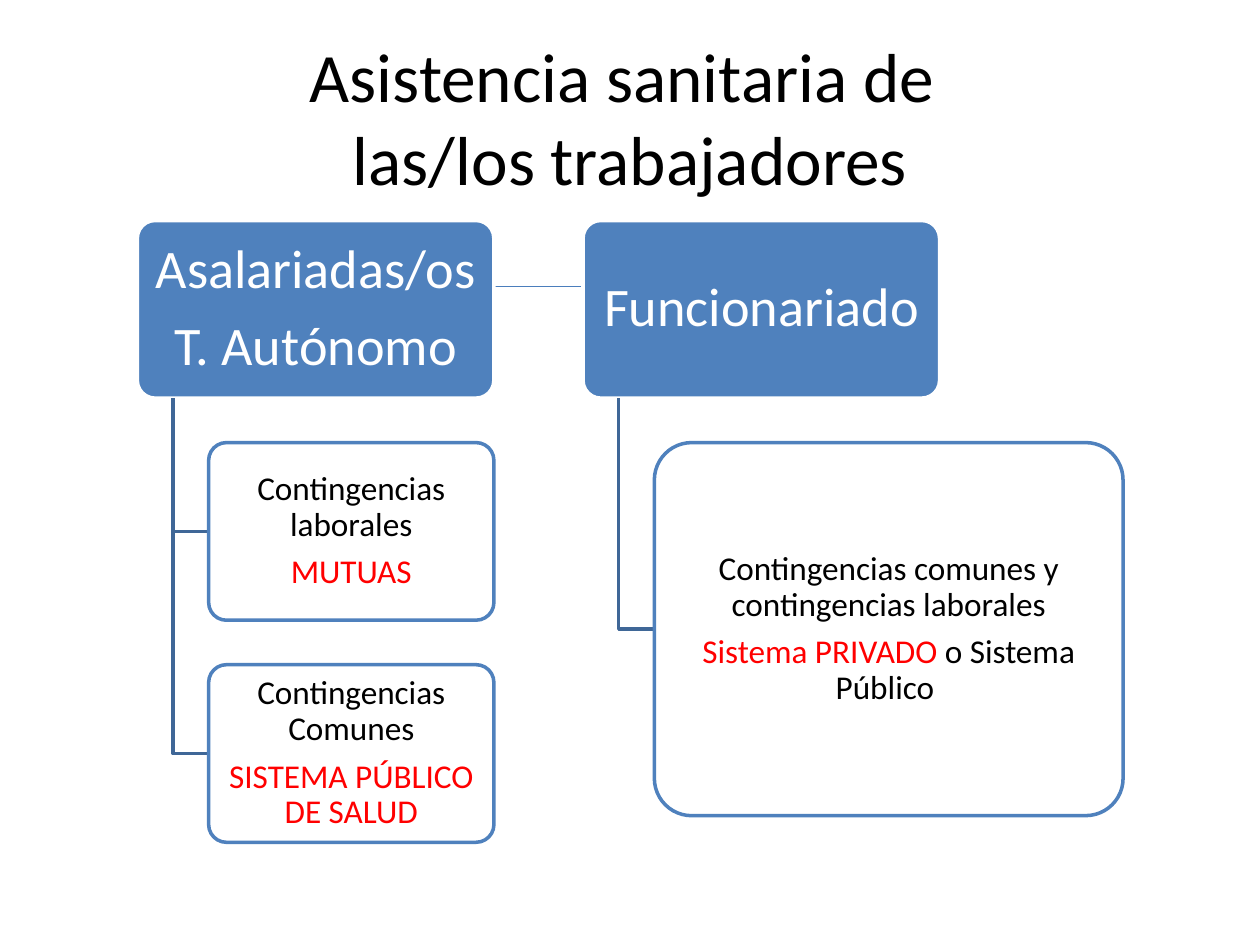
from dataclasses import dataclass

from pptx import Presentation, util as u
from pptx.dml.color import RGBColor
from pptx.enum import shapes, text
from pptx.oxml.ns import qn

COLORS = {
    "black": "000000",
    "white": "FFFFFF",
    "blue": "4F81BD",
    "branch": "3F6797",
    "link": "4B7EBC",
    "red": "FF0000",
}
FONT = "Calibri"

# The tree grid: a header is one column wide and one row high.
COLUMN, ROW = u.Inches(2.83), u.Inches(1.41)
INDENT, GAP = 0.1, 0.25  # shares of a column and of a row
CHILD_WIDTH = 0.8        # share of a column


@dataclass
class Box:
    left: int
    top: int
    width: int
    height: int

    def place(self):
        return [int(n) for n in (self.left, self.top, self.width, self.height)]


def color(name):
    return RGBColor.from_string(COLORS[name])


def add_run(paragraph, words, size, color_name):
    run = paragraph.add_run()
    run.text = words
    run.font.name = FONT
    run.font.size = u.Pt(size)
    run.font.color.rgb = color(color_name)


def set_line(shape, color_name, width):
    shape.line.color.rgb = color(color_name)
    shape.line.width = u.Pt(width)


def add_title(slide, box, lines):
    frame = slide.shapes.add_textbox(*box.place()).text_frame
    frame.word_wrap = True
    frame.vertical_anchor = text.MSO_ANCHOR.MIDDLE
    paragraph = frame.paragraphs[0]
    paragraph.alignment = text.PP_ALIGN.CENTER
    for index, line in enumerate(lines):
        if index:
            paragraph.add_line_break()
        add_run(paragraph, line, 39.6, "black")


def add_node(slide, box, paragraphs, size, fill, outline, inset):
    """Rounded box; each paragraph is a list of (words, color) runs."""
    shape = slide.shapes.add_shape(
        shapes.MSO_SHAPE.ROUNDED_RECTANGLE, *box.place())
    shape.adjustments[0] = 0.1
    shape.shadow.inherit = False
    shape.fill.solid()
    shape.fill.fore_color.rgb = color(fill)
    set_line(shape, outline, 2)

    frame = shape.text_frame
    frame.word_wrap = True
    frame.vertical_anchor = text.MSO_ANCHOR.MIDDLE
    frame.margin_left = frame.margin_right = u.Inches(inset)
    frame.margin_top = frame.margin_bottom = u.Inches(inset * 0.7)
    for index, runs in enumerate(paragraphs):
        paragraph = frame.add_paragraph() if index else frame.paragraphs[0]
        paragraph.alignment = text.PP_ALIGN.CENTER
        paragraph.line_spacing = 0.9
        paragraph.space_after = u.Pt(size * 0.35)
        for words, color_name in runs:
            add_run(paragraph, words, size, color_name)


def add_elbow(slide, header, child):
    """Branch from the header's bottom to the middle of the child's left."""
    x = int(header.left + INDENT * header.width)
    y = int(child.top + child.height / 2)
    builder = slide.shapes.build_freeform(x, int(header.top + header.height))
    builder.add_line_segments([(x, y), (int(child.left), y)], close=False)
    elbow = builder.convert_to_shape()
    elbow.shadow.inherit = False
    elbow.fill.background()
    set_line(elbow, "branch", 2)


def add_branch(slide, header, heading, children, child_width, child_height):
    """Header with its children stacked below it, indented."""
    paragraphs = [[(words, "white")] for words in heading]
    add_node(slide, header, paragraphs, 31, "blue", "white", 0.06)
    gap = GAP * header.height
    top = header.top + header.height + gap
    for child_paragraphs in children:
        child = Box(header.left + 2 * INDENT * header.width, top,
                    child_width, child_height)
        add_elbow(slide, header, child)
        add_node(slide, child, child_paragraphs, 19, "white", "blue", 0.04)
        top += child_height + gap


def add_link(slide, left_header, right_header):
    y = int(left_header.top + 0.37 * left_header.height)
    start = int(left_header.left + 0.97 * left_header.width)
    end = int(right_header.left - u.Inches(0.02))
    link = slide.shapes.add_connector(
        shapes.MSO_CONNECTOR.STRAIGHT, start, y, end, y)
    set_line(link, "link", 0.75)
    properties = link._element.spPr
    properties.append(properties.makeelement(qn("a:effectLst"), {}))


def main():
    presentation = Presentation()
    presentation.slide_width = u.Inches(10)
    presentation.slide_height = u.Inches(7.5)
    slide = presentation.slides.add_slide(presentation.slide_layouts[6])
    width, height = presentation.slide_width, presentation.slide_height

    add_title(slide, Box(0.05 * width, 0.04 * height, 0.9 * width, height / 6),
              ["Asistencia sanitaria de ", "las/los trabajadores"])

    employees, officials = (
        Box(u.Inches(1.09) + column * 1.25 * COLUMN, u.Inches(1.75),
            COLUMN, ROW)
        for column in range(2))
    add_link(slide, employees, officials)
    add_branch(
        slide, employees, ["Asalariadas/os", "T. Autónomo"],
        [[[("Contingencias laborales", "black")], [("MUTUAS", "red")]],
         [[("Contingencias Comunes", "black")],
          [("SISTEMA PÚBLICO DE SALUD", "red")]]],
        CHILD_WIDTH * COLUMN, ROW)
    add_branch(
        slide, officials, ["Funcionariado"],
        [[[("Contingencias comunes y contingencias laborales", "black")],
          [("Sistema PRIVADO", "red"), (" o Sistema Público ", "black")]]],
        u.Inches(3.72), 2.1 * ROW)

    presentation.save("out.pptx")


if __name__ == "__main__":
    main()
